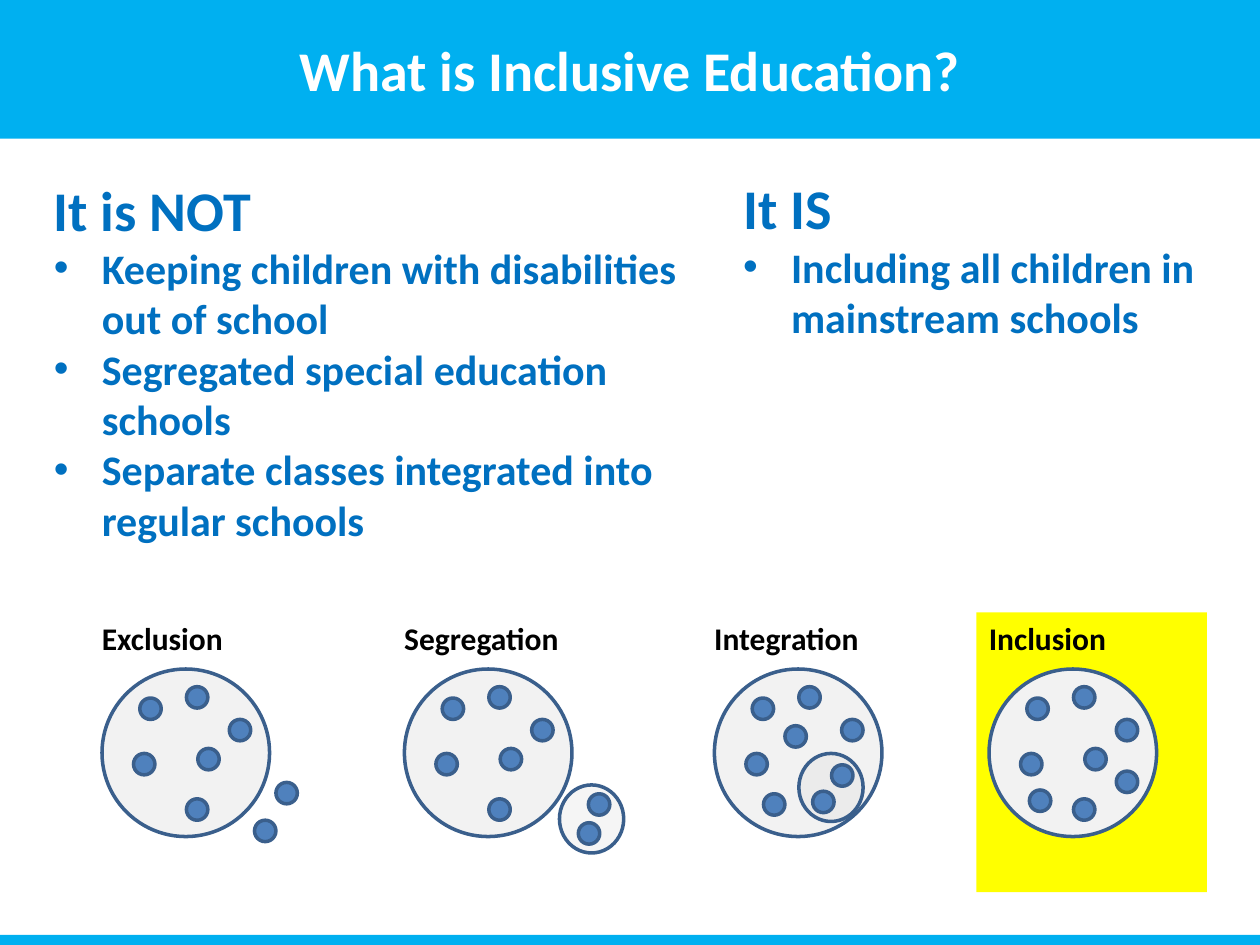
import pptx
import pptx.util
import pptx.dml.color
import pptx.enum.shapes
import pptx.enum.text
import pptx.oxml
import pptx.oxml.ns

Inches = pptx.util.Inches
SHAPE = pptx.enum.shapes.MSO_SHAPE
ALIGN = pptx.enum.text.PP_ALIGN
ANCHOR = pptx.enum.text.MSO_ANCHOR

HUES = {
    "band": "00B0F0", "text": "0070C0", "white": "FFFFFF", "black": "000000",
    "mark": "FFFF00", "disc": "F2F2F2", "ring": "D9D9D9", "dot": "4F81BD",
    "edge": "3A5F8C",
}

# Offsets below are from the top left corner of a panel.
TOP, WIDE, HIGH = 4.86, 1.83, 2.22
DISC, DOT = 1.33, 0.17
BASE = [(0.40, 0.68), (0.77, 0.59), (0.35, 1.12), (1.11, 0.85)]
CORE = BASE + [(0.86, 1.08), (0.77, 1.48)]
# name, left, ring, dots, fill
PANELS = [
    ("Exclusion", 0.71, None, CORE + [(1.48, 1.35), (1.31, 1.65)], None),
    ("Segregation", 3.11, (1.33, 1.37),
     CORE + [(1.56, 1.44), (1.48, 1.67)], None),
    ("Integration", 5.57, (0.77, 1.12),
     BASE + [(0.66, 0.90), (0.49, 1.44), (1.03, 1.21), (0.88, 1.42)], None),
    ("Inclusion", 7.75, None, CORE + [(1.11, 1.26), (0.42, 1.41)], "mark"),
]


def hue(name):
    return pptx.dml.color.RGBColor.from_string(HUES[name])


def write(frame, text, size=18, color="black", align=ALIGN.LEFT,
          bullet=False, first=False):
    """Put one bold paragraph in the frame."""
    para = frame.paragraphs[0] if first else frame.add_paragraph()
    para.alignment = align
    para.space_before = pptx.util.Pt(0)
    if bullet:
        props = para._p.get_or_add_pPr()
        props.set("marL", str(Inches(0.38)))
        props.set("indent", str(-Inches(0.38)))
        space = pptx.oxml.ns.nsdecls("a")
        for tag in ('buFont {} typeface="Arial"', 'buChar {} char="•"'):
            props.append(pptx.oxml.parse_xml(f"<a:{tag.format(space)}/>"))
    run = para.add_run()
    run.text = text
    run.font.name = "Calibri"
    run.font.size = pptx.util.Pt(size)
    run.font.bold = True
    run.font.color.rgb = hue(color)


class Deck:
    def __init__(self):
        self.show = pptx.Presentation()
        self.show.slide_width = Inches(10)
        self.show.slide_height = Inches(7.5)
        self.slide = self.show.slides.add_slide(self.show.slide_layouts[5])

    def title(self, text, high):
        box = self.slide.shapes.title
        box.left, box.top = Inches(0), Inches(0)
        box.width, box.height = Inches(10), Inches(high)
        box.fill.solid()
        box.fill.fore_color.rgb = hue("band")
        frame = box.text_frame
        frame.auto_size = pptx.enum.text.MSO_AUTO_SIZE.NONE
        frame.vertical_anchor = ANCHOR.MIDDLE
        write(frame, text, size=32, color="white", align=ALIGN.CENTER,
              first=True)

    def shape(self, kind, left, top, wide, high, fill, edge=None, alpha=None):
        item = self.slide.shapes.add_shape(
            kind, Inches(left), Inches(top), Inches(wide), Inches(high))
        item.shadow.inherit = False
        item.fill.solid()
        item.fill.fore_color.rgb = hue(fill)
        if alpha:
            color = item.fill._xPr.find(".//" + pptx.oxml.ns.qn("a:srgbClr"))
            space = pptx.oxml.ns.nsdecls("a")
            color.append(pptx.oxml.parse_xml(
                f'<a:alpha {space} val="{alpha * 1000}"/>'))
        if edge:
            item.line.color.rgb = hue(edge)
            item.line.width = pptx.util.Pt(2)
        else:
            item.line.fill.background()
        return item

    def oval(self, left, top, wide, high, fill, alpha=None):
        self.shape(SHAPE.OVAL, left, top, wide, high, fill, "edge", alpha)

    def box(self, left, top, wide, high):
        item = self.slide.shapes.add_textbox(
            Inches(left), Inches(top), Inches(wide), Inches(high))
        item.text_frame.word_wrap = True
        return item

    def points(self, left, top, wide, high, head, lines):
        frame = self.box(left, top, wide, high).text_frame
        write(frame, head, size=32, color="text", first=True)
        for line in lines:
            write(frame, line, size=24, color="text", bullet=True)

    def panel(self, name, left, ring, dots, fill):
        if fill:
            item = self.shape(SHAPE.RECTANGLE, left, TOP, WIDE, HIGH, fill)
        else:
            item = self.box(left, TOP, WIDE, HIGH)
        item.text_frame.vertical_anchor = ANCHOR.TOP
        write(item.text_frame, name, first=True)
        self.oval(left + 0.1, TOP + 0.45, DISC, DISC, "disc")
        if ring:
            self.oval(left + ring[0], TOP + ring[1], 0.51, 0.54, "ring", 25)
        for x, y in dots:
            self.oval(left + x, TOP + y, DOT, DOT, "dot")


def main():
    deck = Deck()
    deck.title("What is Inclusive Education?", 1.1)
    deck.shape(SHAPE.RECTANGLE, 0, 7.42, 10, 0.08, "band")
    deck.points(0.33, 1.34, 5.24, 3.06, "It is NOT", [
        "Keeping children with disabilities out of school",
        "Segregated special education schools",
        "Separate classes integrated into regular schools",
    ])
    deck.points(5.8, 1.33, 3.89, 1.45, "It IS", [
        "Including all children in mainstream schools",
    ])
    for panel in PANELS:
        deck.panel(*panel)
    deck.show.save("out.pptx")


if __name__ == "__main__":
    main()
